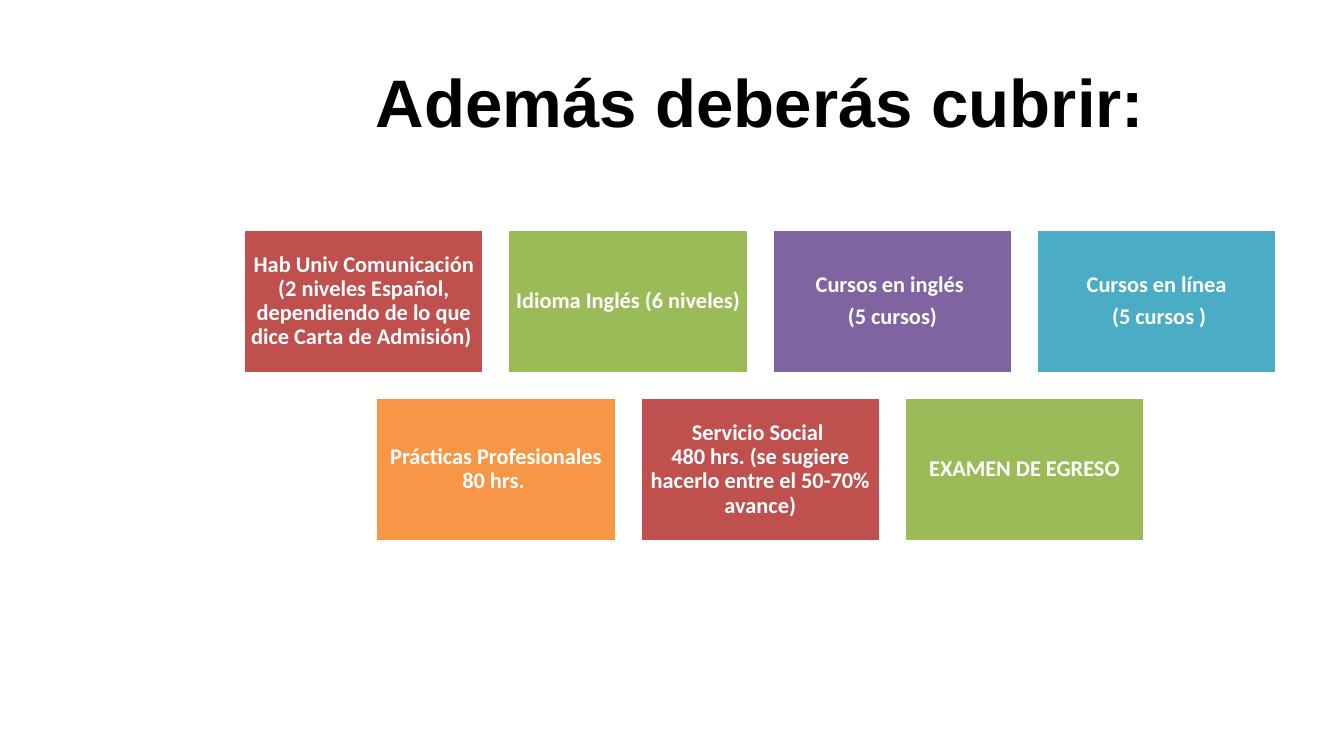
from pptx import Presentation
from pptx.dml.color import RGBColor
from pptx.enum.shapes import MSO_SHAPE
from pptx.enum.text import MSO_ANCHOR, PP_ALIGN
from pptx.util import Cm, Pt

RECTANGLE = MSO_SHAPE.RECTANGLE
MIDDLE = MSO_ANCHOR.MIDDLE
CENTER = PP_ALIGN.CENTER

COLORS = {
    "black": "000000",
    "white": "FFFFFF",
    "red": "C0504D",
    "green": "9BBB59",
    "purple": "8064A2",
    "blue": "4BACC6",
    "orange": "F79646",
}

ROWS_CENTER, FIRST_TOP = 19.16, 5.78
CARD_WIDTH, CARD_HEIGHT = 6.05, 3.63
COLUMN_STEP, ROW_STEP = 6.66, 4.24
CARD_INSET = Cm(0.17)

REQUIREMENT_ROWS = [
    [
        ("red", ["Hab Univ Comunicación (2 niveles Español, dependiendo de lo que dice Carta de Admisión) "]),
        ("green", ["Idioma Inglés (6 niveles)"]),
        ("purple", ["Cursos en inglés ", "(5 cursos)"]),
        ("blue", ["Cursos en línea", " (5 cursos )"]),
    ],
    [
        ("orange", ["Prácticas Profesionales 80 hrs. "]),
        ("red", ["Servicio Social \n480 hrs. (se sugiere hacerlo entre el 50-70% avance)"]),
        ("green", ["EXAMEN DE EGRESO"]),
    ],
]


def add_bold_run(paragraph, text, font_name, size, color):
    run = paragraph.add_run()
    run.text = text
    run.font.name = font_name
    run.font.size = Pt(size)
    run.font.bold = True
    run.font.color.rgb = RGBColor.from_string(COLORS[color])


presentation = Presentation()
presentation.slide_width = Cm(33.87)
presentation.slide_height = Cm(19.05)
slide = presentation.slides.add_slide(presentation.slide_layouts[5])

title = slide.shapes.title
title.left, title.top = Cm(6.14), Cm(1.07)
title.width, title.height = Cm(26.04), Cm(2.95)
title.text_frame.vertical_anchor = MIDDLE
title_paragraph = title.text_frame.paragraphs[0]
title_paragraph.alignment = CENTER
add_bold_run(title_paragraph, "Además deberás cubrir:", "Arial", 48, "black")

for row_index, row in enumerate(REQUIREMENT_ROWS):
    row_width = (len(row) - 1) * COLUMN_STEP + CARD_WIDTH
    row_left = ROWS_CENTER - row_width / 2
    for column_index, (color, paragraphs) in enumerate(row):
        card = slide.shapes.add_shape(
            RECTANGLE,
            Cm(row_left + column_index * COLUMN_STEP),
            Cm(FIRST_TOP + row_index * ROW_STEP),
            Cm(CARD_WIDTH),
            Cm(CARD_HEIGHT),
        )
        card.shadow.inherit = False
        card.fill.solid()
        card.fill.fore_color.rgb = RGBColor.from_string(COLORS[color])
        card.line.color.rgb = RGBColor.from_string(COLORS["white"])
        card.line.width = Pt(2)

        frame = card.text_frame
        frame.word_wrap = True
        frame.vertical_anchor = MIDDLE
        frame.margin_left = frame.margin_right = CARD_INSET
        frame.margin_top = frame.margin_bottom = CARD_INSET
        for paragraph_index, text in enumerate(paragraphs):
            paragraph = frame.add_paragraph() if paragraph_index else frame.paragraphs[0]
            paragraph.alignment = CENTER
            paragraph.line_spacing = 0.9
            paragraph.space_after = Pt(5.6)
            for line_index, line in enumerate(text.split("\n")):
                if line_index:
                    paragraph.add_line_break()
                add_bold_run(paragraph, line, "Calibri", 16, "white")

presentation.save("out.pptx")
